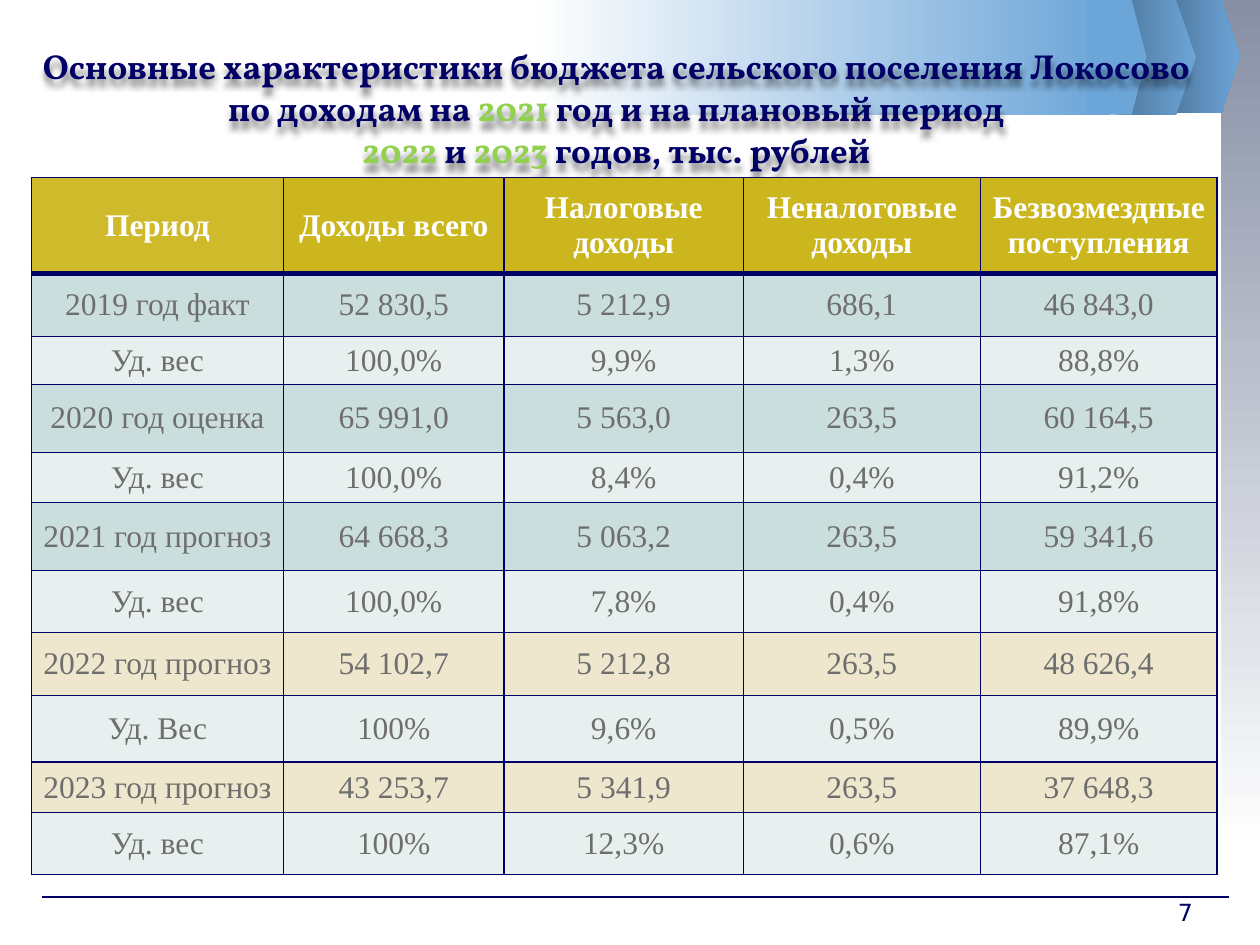
from lxml import etree
from pptx import Presentation
from pptx.dml.color import RGBColor
from pptx.enum import shapes as es, text as et
from pptx.oxml import ns
from pptx.util import Inches, Pt

NAVY = RGBColor(0x00, 0x00, 0x66)
GREEN = RGBColor(0x92, 0xD0, 0x50)
WHITE = RGBColor(0xFF, 0xFF, 0xFF)
GRAY = RGBColor(0x6E, 0x6E, 0x6E)
SLATE = RGBColor(0x87, 0x8F, 0xA5)
STEEL = RGBColor(0x4D, 0x76, 0x9B)
SKY = RGBColor(0x6C, 0xA5, 0xD8)
GOLD = RGBColor(0xCB, 0xB6, 0x1D)
TEAL = RGBColor(0xCB, 0xDE, 0xDE)
PALE = RGBColor(0xE7, 0xEF, 0xEF)
SAND = RGBColor(0xEE, 0xE7, 0xCD)

TITLE = [
    ("Основные характеристики бюджета сельского поселения Локосово по доходам на ", NAVY),
    ("2021 ", GREEN), ("год и на плановый период\n", NAVY),
    ("2022", GREEN), (" и ", NAVY), ("2023", GREEN), (" годов, тыс. рублей", NAVY),
]
COLS = [2, 1.75, 1.9, 1.88, 1.88]
HEAD = ["Период", "Доходы всего", "Налоговые доходы", "Неналоговые доходы",
        "Безвозмездные поступления"]
# height, fill, texts
ROWS = [
    (0.76, GOLD, HEAD),
    (0.5, TEAL, ["2019 год факт", "52 830,5", "5 212,9", "686,1", "46 843,0"]),
    (0.38, PALE, ["Уд. вес", "100,0%", "9,9%", "1,3%", "88,8%"]),
    (0.54, TEAL, ["2020 год оценка", "65 991,0", "5 563,0", "263,5", "60 164,5"]),
    (0.4, PALE, ["Уд. вес", "100,0%", "8,4%", "0,4%", "91,2%"]),
    (0.54, TEAL, ["2021 год прогноз", "64 668,3", "5 063,2", "263,5", "59 341,6"]),
    (0.49, PALE, ["Уд. вес", "100,0%", "7,8%", "0,4%", "91,8%"]),
    (0.5, SAND, ["2022 год прогноз", "54 102,7", "5 212,8", "263,5", "48 626,4"]),
    (0.53, PALE, ["Уд. Вес", "100%", "9,6%", "0,5%", "89,9%"]),
    (0.4, SAND, ["2023 год прогноз", "43 253,7", "5 341,9", "263,5", "37 648,3"]),
    (0.49, PALE, ["Уд. вес", "100%", "12,3%", "0,6%", "87,1%"]),
]


def sub(node, tag, **attrs):
    return etree.SubElement(node, ns.qn(tag), {k: str(v) for k, v in attrs.items()})


def write(para, words, font="Times New Roman", size=18, color=GRAY, bold=False):
    """Add a run; a newline at its end becomes a line break."""
    run = para.add_run()
    run.text = words.rstrip("\n")
    run.font.name, run.font.size, run.font.bold = font, Pt(size), bold
    run.font.color.rgb = color
    if words.endswith("\n"):
        para.add_line_break()


def block(slide, kind, x, y, w, h, first, last=None, angle=0):
    """Draw a borderless shape, with a gradient when a last colour is given."""
    box = slide.shapes.add_shape(kind, Inches(x), Inches(y), Inches(w), Inches(h))
    box.shadow.inherit = False
    box.line.fill.background()
    if last is None:
        box.fill.solid()
        box.fill.fore_color.rgb = first
    else:
        box.fill.gradient()
        box.fill.gradient_angle = angle
        for stop, color in zip(box.fill.gradient_stops, (first, last)):
            stop.color.rgb = color
    if kind == es.MSO_SHAPE.PENTAGON:
        box.adjustments[0] = 0.25


def banner(slide, x, y, h):
    """Draw the blue band with its arrow tips, starting at x."""
    tip = es.MSO_SHAPE.PENTAGON
    block(slide, tip, x + 5.04, y - 0.01, 0.59, h, STEEL, SKY)
    block(slide, tip, x + 4.65, y, 0.63, h, STEEL, SKY)
    block(slide, es.MSO_SHAPE.RECTANGLE, x, y, 4.6, h, WHITE, SKY)
    block(slide, tip, x + 4.42, y, 0.47, h, SKY)


def rule(slide, x, y, w):
    line = slide.shapes.add_connector(
        es.MSO_CONNECTOR.STRAIGHT, Inches(x), Inches(y), Inches(x + w), Inches(y))
    line.line.color.rgb, line.line.width = NAVY, Pt(0.75)
    sub(line._element.spPr, "a:effectLst")


def textbox(slide, x, y, w, h):
    box = slide.shapes.add_textbox(Inches(x), Inches(y), Inches(w), Inches(h))
    box.text_frame.word_wrap = True
    return box, box.text_frame.paragraphs[0]


def title(slide, x, y, w, h):
    box, para = textbox(slide, x, y, w, h)
    para.alignment = et.PP_ALIGN.CENTER
    para.line_spacing = Pt(24)
    for words, color in TITLE:
        write(para, words, font="Vollkorn", size=19.8, color=color, bold=True)
    glow = sub(sub(box._element.spPr, "a:effectLst"), "a:outerShdw",
               blurRad=Pt(4), dist=Pt(4), dir=5400000, algn="t", rotWithShape=0)
    sub(sub(glow, "a:srgbClr", val="000000"), "a:alpha", val=50000)


def edge(cell, top, bottom):
    """Put borders on a cell, with its top and bottom widths in points."""
    props = cell._tc.get_or_add_tcPr()
    for i, (side, width) in enumerate(zip("LRTB", (1, 1, top, bottom))):
        line = etree.Element(ns.qn(f"a:ln{side}"), w=str(Pt(width)))
        sub(sub(line, "a:solidFill"), "a:srgbClr", val=str(NAVY))
        props.insert(i, line)


def budget(slide, x, y):
    high = sum(row[0] for row in ROWS)
    grid = slide.shapes.add_table(len(ROWS), len(COLS), Inches(x), Inches(y),
                                  Inches(sum(COLS)), Inches(high)).table
    for col, width in zip(grid.columns, COLS):
        col.width = Inches(width)
    for r, (height, fill, words) in enumerate(ROWS):
        grid.rows[r].height = Inches(height)
        for c, word in enumerate(words):
            cell = grid.cell(r, c)
            cell.margin_left = cell.margin_right = Inches(0.07)
            cell.margin_top = cell.margin_bottom = 0
            cell.vertical_anchor = et.MSO_ANCHOR.MIDDLE
            cell.fill.solid()
            cell.fill.fore_color.rgb = fill
            para = cell.text_frame.paragraphs[0]
            para.alignment = et.PP_ALIGN.CENTER
            write(para, word, color=GRAY if r else WHITE, bold=r == 0)
            edge(cell, 3 if r == 1 else 1, 1 if r else 3)
    tint = grid.cell(0, 0)._tc.tcPr.find(ns.qn("a:solidFill"))[0]
    sub(tint, "a:alpha", val=94000)


def number(slide, x, y, w, h):
    para = textbox(slide, x, y, w, h)[1]
    write(para, "7", font="DejaVu Sans", size=13.5, color=NAVY)


def main():
    deck = Presentation()
    deck.slide_width, deck.slide_height = Inches(10), Inches(7.5)
    slide = deck.slides.add_slide(deck.slide_layouts[6])
    block(slide, es.MSO_SHAPE.RECTANGLE, 9.69, 0, 0.31, 6.77, SLATE, WHITE, 270)
    rule(slide, 0.33, 7.12, 9.42)
    banner(slide, 4.21, 0, 0.91)
    title(slide, 0.17, 0.3, 9.44, 1.25)
    budget(slide, 0.25, 1.41)
    number(slide, 9.25, 7.08, 0.42, 0.42)
    deck.save("out.pptx")


if __name__ == "__main__":
    main()
